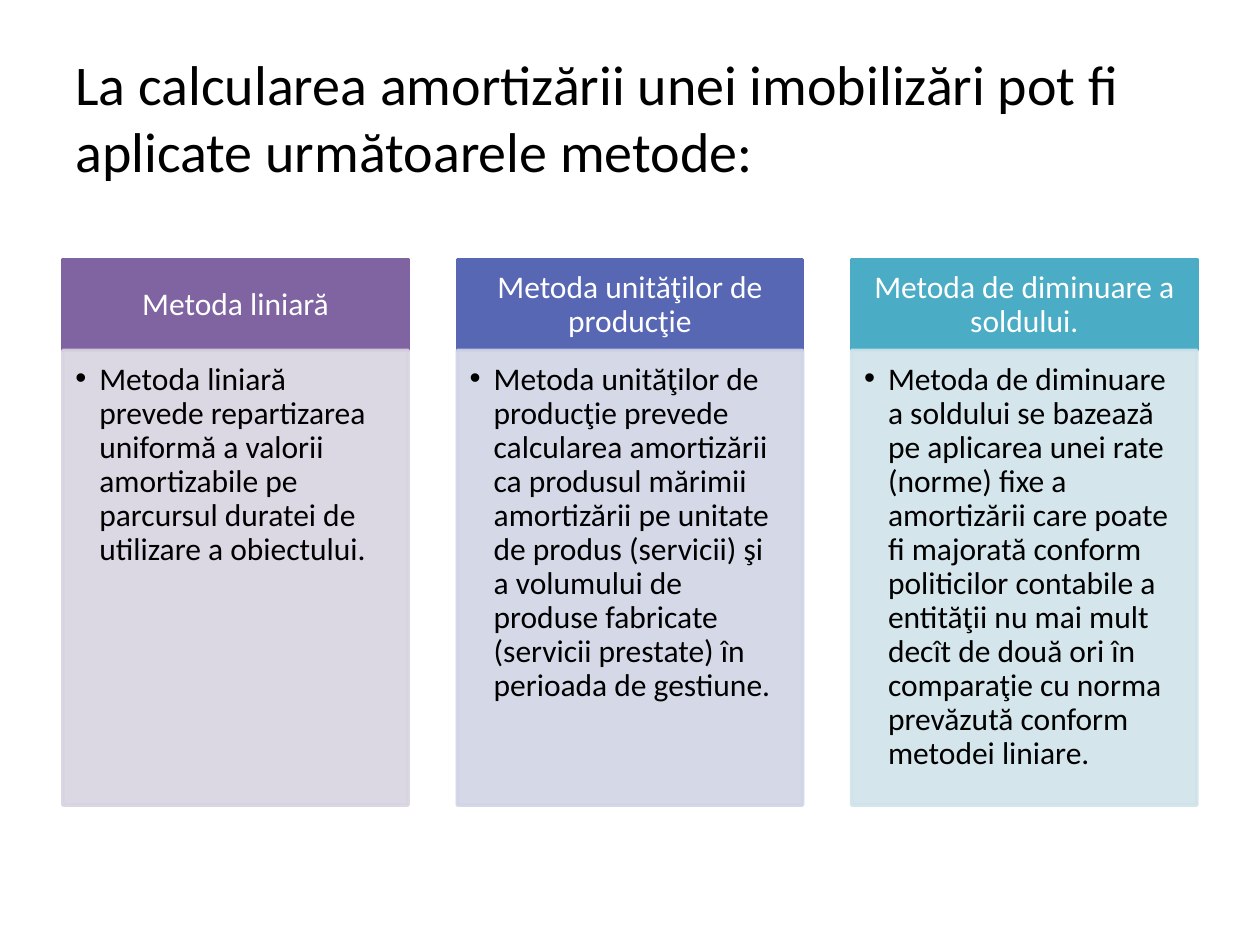
from lxml import etree
from pptx import Presentation
from pptx.dml.color import RGBColor
from pptx.enum.shapes import MSO_SHAPE
from pptx.enum.text import MSO_ANCHOR, PP_ALIGN
from pptx.oxml.ns import qn
from pptx.util import Inches, Pt

RECT = MSO_SHAPE.RECTANGLE
TOP, MIDDLE = MSO_ANCHOR.TOP, MSO_ANCHOR.MIDDLE
LEFT, CENTER = PP_ALIGN.LEFT, PP_ALIGN.CENTER

BLACK = RGBColor(0x00, 0x00, 0x00)
WHITE = RGBColor(0xFF, 0xFF, 0xFF)
PURPLE = RGBColor(0x80, 0x64, 0xA2)
LILAC = RGBColor(0xD8, 0xD3, 0xE0)
BLUE = RGBColor(0x57, 0x67, 0xB4)
PALE_BLUE = RGBColor(0xD1, 0xD4, 0xE5)
TEAL = RGBColor(0x4B, 0xAC, 0xC6)
PALE_TEAL = RGBColor(0xD0, 0xE3, 0xEA)

MARGIN, STEP, WIDTH = 0.5, 3.13, 2.74
HEAD_TOP, HEAD_HIGH, BODY_HIGH = 2.06, 0.72, 3.61

TITLE = "La calcularea amortizării unei imobilizări pot fi aplicate următoarele metode:"
METHODS = [
    ("Metoda liniară", PURPLE, LILAC,
     "Metoda liniară prevede repartizarea uniformă a valorii amortizabile pe "
     "parcursul duratei de utilizare a obiectului."),
    ("Metoda unităţilor de producţie", BLUE, PALE_BLUE,
     "Metoda unităţilor de producţie prevede calcularea amortizării ca produsul "
     "mărimii amortizării pe unitate de produs (servicii) şi a volumului de "
     "produse fabricate (servicii prestate) în perioada de gestiune."),
    ("Metoda de diminuare a soldului.", TEAL, PALE_TEAL,
     "Metoda de diminuare a soldului se bazează pe aplicarea unei rate (norme) "
     "fixe a amortizării care poate fi majorată conform politicilor contabile a "
     "entităţii nu mai mult decît de două ori în comparaţie cu norma prevăzută "
     "conform metodei liniare."),
]


class Deck:
    font = "Calibri"

    def __init__(self):
        self.file = Presentation()
        self.file.slide_width = Inches(10)
        self.file.slide_height = Inches(7.5)
        self.slide = self.file.slides.add_slide(self.file.slide_layouts[6])

    def apply(self, target, values):
        for name, value in values.items():
            setattr(target, name, value)

    def label(self, shape, text, size, color, align, anchor, pads, space):
        frame = shape.text_frame
        sides = ("margin_left", "margin_top", "margin_right", "margin_bottom")
        self.apply(frame, {"word_wrap": True, "vertical_anchor": anchor})
        self.apply(frame, dict(zip(sides, map(Inches, pads))))
        para = frame.paragraphs[0]
        self.apply(para, {"alignment": align, "line_spacing": space})
        run = para.add_run()
        run.text = text
        self.apply(run.font, {"name": self.font, "size": Pt(size)})
        run.font.color.rgb = color
        return para

    def title(self, text):
        box = self.slide.shapes.add_textbox(*map(Inches, (MARGIN, 0.3, 9, 1.25)))
        self.label(box, text, 32, BLACK, LEFT, MIDDLE, (0.1, 0.05, 0.1, 0.05), 1.0)

    def panel(self, col, top, high, color):
        left = MARGIN + col * STEP
        shape = self.slide.shapes.add_shape(RECT, *map(Inches, (left, top, WIDTH, high)))
        shape.shadow.inherit = False
        shape.fill.solid()
        shape.fill.fore_color.rgb = color
        shape.line.color.rgb = color
        shape.line.width = Pt(2)
        return shape

    def head(self, col, text, color):
        shape = self.panel(col, HEAD_TOP, HEAD_HIGH, color)
        self.label(shape, text, 18, WHITE, CENTER, MIDDLE, (0.14, 0.08, 0.14, 0.08), 0.9)

    def body(self, col, text, color):
        shape = self.panel(col, HEAD_TOP + HEAD_HIGH, BODY_HIGH, color)
        for tint in shape.element.spPr.iter(qn("a:srgbClr")):
            etree.SubElement(tint, qn("a:alpha"), val="90000")
        para = self.label(shape, text, 18, BLACK, LEFT, TOP, (0.1, 0.1, 0.14, 0.16), 0.9)
        self.bullet(para)

    def bullet(self, para):
        props = para._p.get_or_add_pPr()
        indent = Inches(0.19)
        props.set("marL", str(indent))
        props.set("indent", str(-indent))
        etree.SubElement(props, qn("a:buFont"), typeface="Arial")
        etree.SubElement(props, qn("a:buChar"), char="•")


def main():
    deck = Deck()
    deck.title(TITLE)
    for col, (name, dark, pale, text) in enumerate(METHODS):
        deck.head(col, name, dark)
        deck.body(col, text, pale)
    deck.file.save("out.pptx")


if __name__ == "__main__":
    main()
